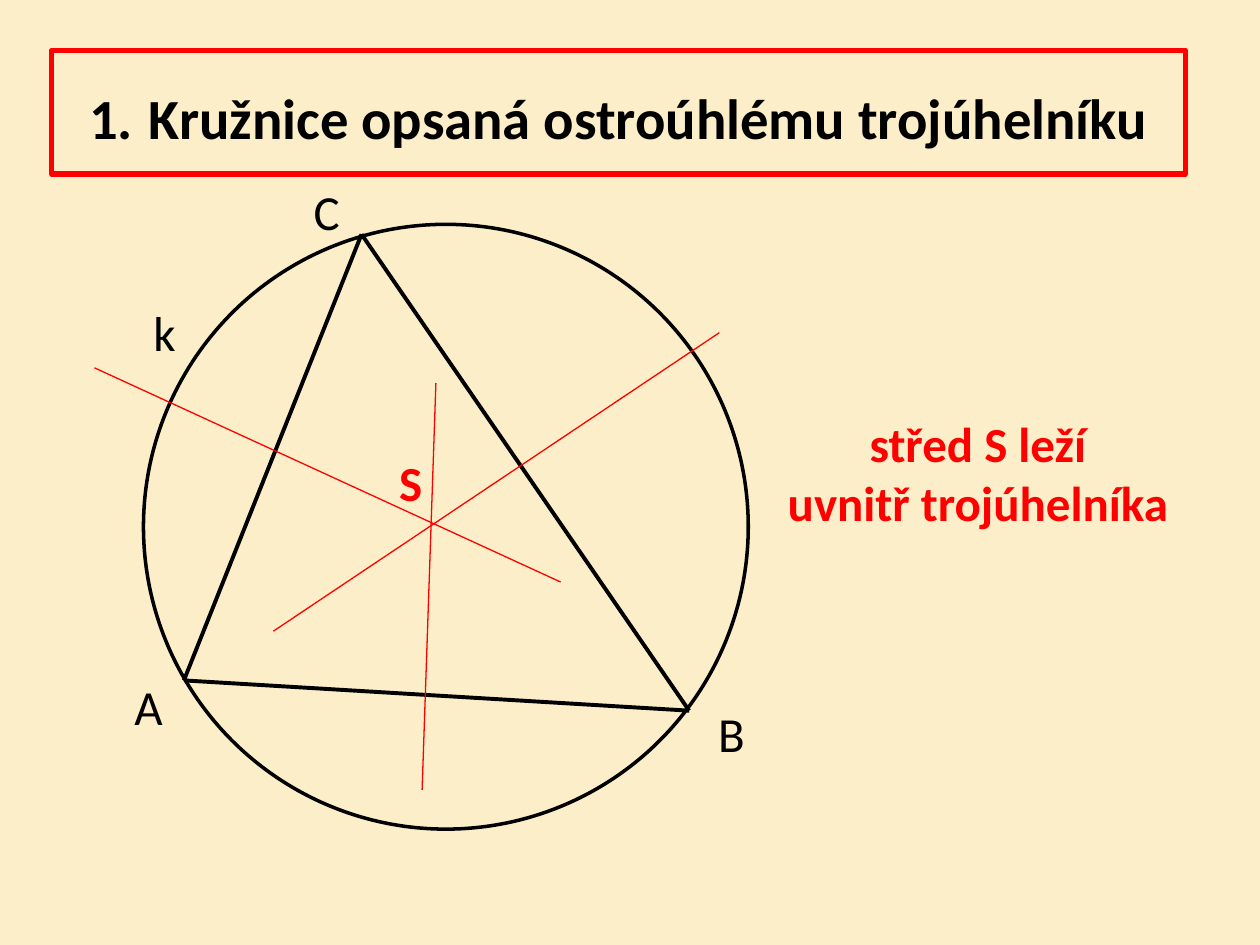
"""Build a slide on the circumscribed circle of an acute triangle."""
from itertools import combinations

from pptx import Presentation
from pptx.dml.color import RGBColor
from pptx.enum import shapes, text
from pptx.oxml.ns import qn
from pptx.util import Pt

BLACK = RGBColor(0, 0, 0)
RED = RGBColor(255, 0, 0)
CREAM = RGBColor(0xFB, 0xEE, 0xC9)
FONT = "Calibri"

TITLE = [
    ("1.", 32.4, True),
    (" ", 39.6, False),
    ("Kružnice opsaná ostroúhlému trojúhelníku", 32.4, True),
]
TITLE_BOX = (29.4, 28.8, 648, 70.6)
CIRCLE = (82, 128.2, 345.6, 345.6)
CORNERS = [(105.1, 388.8), (393.8, 406.1), (206.6, 133.9)]
AXES = [
    ((411.1, 190.1), (156.2, 360.7)),
    ((54, 210.2), (320.4, 332.6)),
    ((249.1, 218.9), (241.2, 451.4)),
]
LABELS = [
    (["k"], (80.6, 169.2, 27.4, 41), BLACK),
    (["S"], (221, 254.9, 28.1, 41), RED),
    (["C"], (172.1, 100.1, 29.5, 41), BLACK),
    (["B"], (403.2, 398.2, 30.2, 41), BLACK),
    (["A"], (69.8, 383, 31, 41), BLACK),
    (["střed S leží", "uvnitř trojúhelníka"], (441.4, 232.6, 234.7, 74.9), RED),
]


def pts(nums):
    return [Pt(n) for n in nums]


def style(font, size, color, bold):
    font.name, font.size, font.bold = FONT, Pt(size), bold
    font.color.rgb = color


def stroke(shape, color, width):
    shape.line.color.rgb = color
    shape.line.width = Pt(width)


def add_title(slide):
    title = slide.shapes.title
    title.left, title.top, title.width, title.height = pts(TITLE_BOX)
    stroke(title, RED, 3)
    frame = title.text_frame
    frame.auto_size = text.MSO_AUTO_SIZE.NONE
    frame.vertical_anchor = text.MSO_ANCHOR.MIDDLE
    para = frame.paragraphs[0]
    para.alignment = text.PP_ALIGN.CENTER
    for words, size, bold in TITLE:
        run = para.add_run()
        run.text = words
        style(run.font, size, BLACK, bold)


def add_circle(slide):
    circle = slide.shapes.add_shape(shapes.MSO_SHAPE.OVAL, *pts(CIRCLE))
    circle.shadow.inherit = False
    circle.fill.background()
    stroke(circle, BLACK, 2)


def add_line(slide, start, end, color, width):
    line = slide.shapes.add_connector(
        shapes.MSO_CONNECTOR.STRAIGHT, *pts(start + end))
    stroke(line, color, width)
    props = line._element.spPr
    props.append(props.makeelement(qn("a:effectLst"), {}))


def add_label(slide, lines, box, color):
    frame = slide.shapes.add_textbox(*pts(box)).text_frame
    frame.word_wrap = False
    frame.auto_size = text.MSO_AUTO_SIZE.SHAPE_TO_FIT_TEXT
    frame.text = "\n".join(lines)
    for para in frame.paragraphs:
        if len(lines) > 1:
            para.alignment = text.PP_ALIGN.CENTER
        style(para.font, 28, color, color == RED)


def main():
    deck = Presentation()
    deck.slide_width, deck.slide_height = Pt(720), Pt(540)
    slide = deck.slides.add_slide(deck.slide_layouts[5])
    slide.background.fill.solid()
    slide.background.fill.fore_color.rgb = CREAM
    add_title(slide)
    add_circle(slide)
    for start, end in combinations(CORNERS, 2):
        add_line(slide, start, end, BLACK, 2.25)
    for start, end in AXES:
        add_line(slide, start, end, RED, 0.75)
    for label in LABELS:
        add_label(slide, *label)
    deck.save("out.pptx")


if __name__ == "__main__":
    main()
